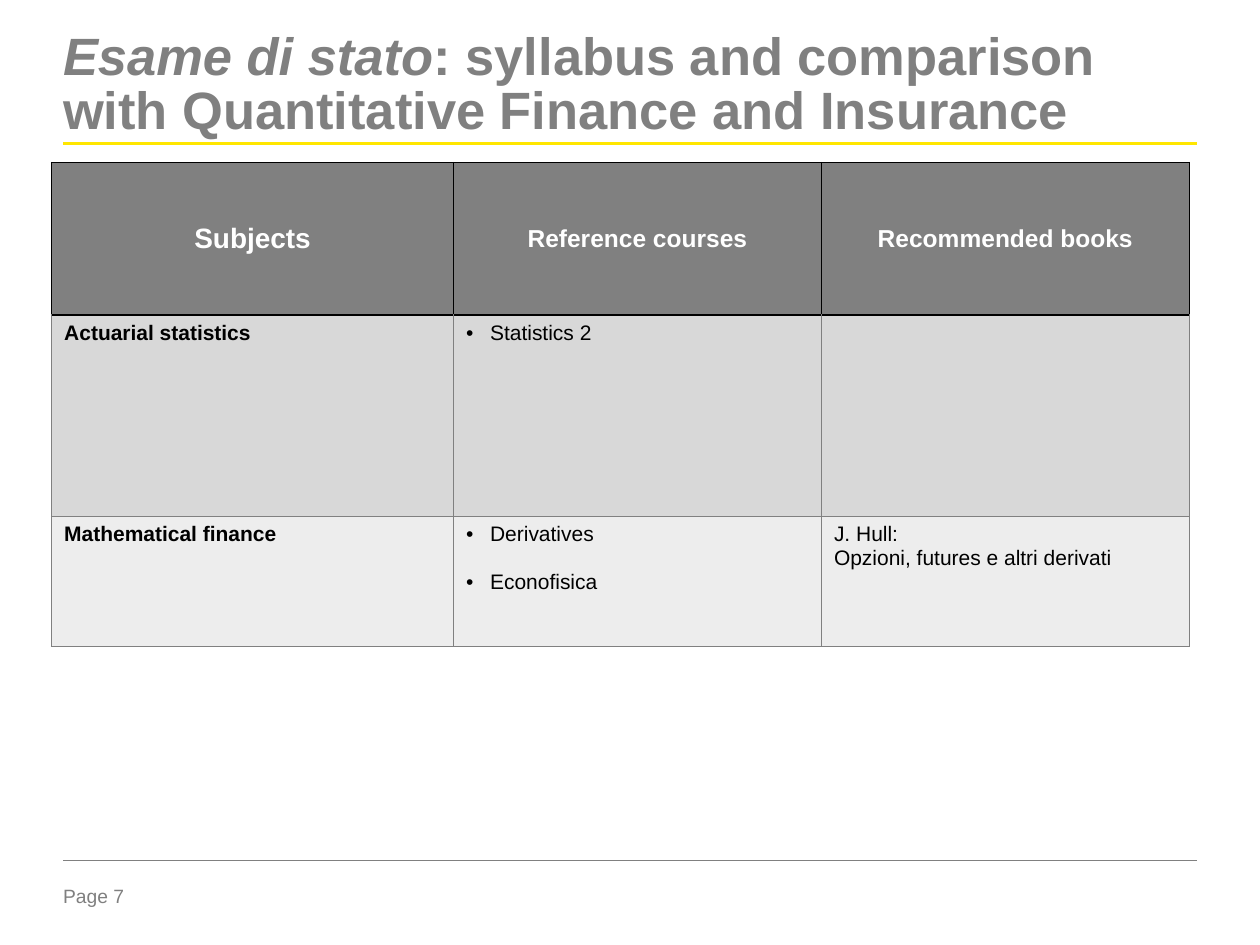
from dataclasses import dataclass

from lxml import etree
from pptx import Presentation
from pptx.dml.color import RGBColor
from pptx.enum.shapes import MSO_CONNECTOR
from pptx.enum.text import MSO_ANCHOR, MSO_AUTO_SIZE, PP_ALIGN
from pptx.oxml.ns import qn
from pptx.util import Inches, Pt

STRAIGHT = MSO_CONNECTOR.STRAIGHT
TOP, MIDDLE = MSO_ANCHOR.TOP, MSO_ANCHOR.MIDDLE
LEFT, CENTER = PP_ALIGN.LEFT, PP_ALIGN.CENTER
NO_AUTOFIT = MSO_AUTO_SIZE.NONE
TITLE_ONLY = 5


@dataclass(frozen=True)
class Theme:
    font: str = "Arial"
    gray: str = "808080"
    yellow: str = "FFE600"
    black: str = "000000"
    white: str = "FFFFFF"
    row_fills: tuple = ("D8D8D8", "EDEDED")
    title_size: float = 30
    subject_header_size: float = 16
    header_size: float = 14
    body_size: float = 12
    footer_size: float = 11
    bullet_gap: float = 13.5
    bullet_indent: float = 0.19


class SlideBuilder:
    def __init__(self, slide, theme):
        self.slide = slide
        self.theme = theme

    def style_runs(self, paragraph, size, color, bold=False):
        for run in paragraph.runs:
            run.font.name = self.theme.font
            run.font.size = Pt(size)
            run.font.bold = bold
            run.font.color.rgb = RGBColor.from_string(color)

    def frame(self, text_frame, top_inset=0):
        text_frame.word_wrap = True
        text_frame.auto_size = NO_AUTOFIT
        text_frame.vertical_anchor = TOP
        text_frame.margin_left = text_frame.margin_right = text_frame.margin_bottom = 0
        text_frame.margin_top = Inches(top_inset)

    def title(self, emphasis, rest, left, top, width, height):
        title = self.slide.shapes.title
        title.left, title.top = Inches(left), Inches(top)
        title.width, title.height = Inches(width), Inches(height)
        self.frame(title.text_frame, 0.04)
        heading = title.text_frame.paragraphs[0]
        heading.alignment = LEFT
        heading.line_spacing = 0.85
        for text, italic in ((emphasis, True), (rest, False)):
            run = heading.add_run()
            run.text = text
            run.font.italic = italic
        self.style_runs(heading, self.theme.title_size, self.theme.gray, True)

    def rule(self, left, right, y, color, weight):
        rule = self.slide.shapes.add_connector(
            STRAIGHT, Inches(left), Inches(y), Inches(right), Inches(y))
        rule.line.color.rgb = RGBColor.from_string(color)
        rule.line.width = Pt(weight)
        etree.SubElement(rule._element.spPr, qn("a:effectLst"))

    def label(self, text, left, top, width, height):
        label = self.slide.shapes.add_textbox(
            Inches(left), Inches(top), Inches(width), Inches(height))
        self.frame(label.text_frame)
        label.text_frame.text = text
        self.style_runs(label.text_frame.paragraphs[0],
                        self.theme.footer_size, self.theme.gray)

    def borders(self, cell, color, top_color):
        properties = cell._tc.get_or_add_tcPr()
        sides = {"L": color, "R": color, "T": top_color, "B": color}
        for position, (side, side_color) in enumerate(sides.items()):
            border = etree.Element(qn(f"a:ln{side}"), w=str(Pt(1)))
            fill = etree.SubElement(border, qn("a:solidFill"))
            etree.SubElement(fill, qn("a:srgbClr"), val=side_color)
            properties.insert(position, border)

    def bullet(self, paragraph):
        indent = Inches(self.theme.bullet_indent)
        properties = paragraph._p.get_or_add_pPr()
        properties.set("marL", str(indent))
        properties.set("indent", str(-indent))
        etree.SubElement(properties, qn("a:buFont"), typeface=self.theme.font)
        etree.SubElement(properties, qn("a:buChar"), char="•")

    def header_cell(self, cell, text, size):
        theme = self.theme
        cell.text_frame.text = text
        cell.vertical_anchor = MIDDLE
        heading = cell.text_frame.paragraphs[0]
        heading.alignment = CENTER
        self.style_runs(heading, size, theme.white, True)
        self.paint(cell, theme.gray, theme.black, theme.black)

    def body_cell(self, cell, lines, fill, top_color, bold, bulleted):
        theme = self.theme
        cell.text_frame.text = "\n".join(lines)
        for index, paragraph in enumerate(cell.text_frame.paragraphs):
            self.style_runs(paragraph, theme.body_size, theme.black, bold)
            if bulleted:
                if index:
                    paragraph.space_before = Pt(theme.bullet_gap)
                self.bullet(paragraph)
        self.paint(cell, fill, theme.gray, top_color)

    def paint(self, cell, fill, border, top_border):
        cell.fill.solid()
        cell.fill.fore_color.rgb = RGBColor.from_string(fill)
        self.borders(cell, border, top_border)

    def syllabus(self, headers, subjects, left, top, widths, heights):
        theme = self.theme
        table = self.slide.shapes.add_table(
            len(heights), len(widths), Inches(left), Inches(top),
            Inches(sum(widths)), Inches(sum(heights))).table
        table.horz_banding = False
        for column, width in zip(table.columns, widths):
            column.width = Inches(width)
        for row, height in zip(table.rows, heights):
            row.height = Inches(height)
        for column, header in enumerate(headers):
            size = theme.header_size if column else theme.subject_header_size
            self.header_cell(table.cell(0, column), header, size)
        for row, (entries, fill) in enumerate(zip(subjects, theme.row_fills), 1):
            top_color = theme.black if row == 1 else theme.gray
            for column, lines in enumerate(entries):
                self.body_cell(table.cell(row, column), lines, fill, top_color,
                               bold=column == 0, bulleted=column == 1)


def main():
    presentation = Presentation()
    presentation.slide_width = Inches(10)
    presentation.slide_height = Inches(7.5)
    theme = Theme()
    slide = presentation.slides.add_slide(presentation.slide_layouts[TITLE_ONLY])
    builder = SlideBuilder(slide, theme)

    builder.label("Page 7", 0.5, 7.02, 0.79, 0.22)
    builder.rule(0.5, 9.5, 1.14, theme.yellow, 1.5)
    builder.rule(0.5, 9.5, 6.83, theme.gray, 0.25)
    builder.title("Esame di stato",
                  ": syllabus and comparison with Quantitative Finance and Insurance",
                  0.5, 0.22, 9, 0.94)
    builder.syllabus(
        ["Subjects", "Reference courses", "Recommended books"],
        [
            (["Actuarial statistics"], ["Statistics 2"], []),
            (["Mathematical finance"], ["Derivatives", "Econofisica"],
             ["J. Hull:", "Opzioni, futures e altri derivati"]),
        ],
        0.41, 1.29, [3.19, 2.92, 2.92], [1.21, 1.6, 1.03])

    presentation.save("out.pptx")


if __name__ == "__main__":
    main()
